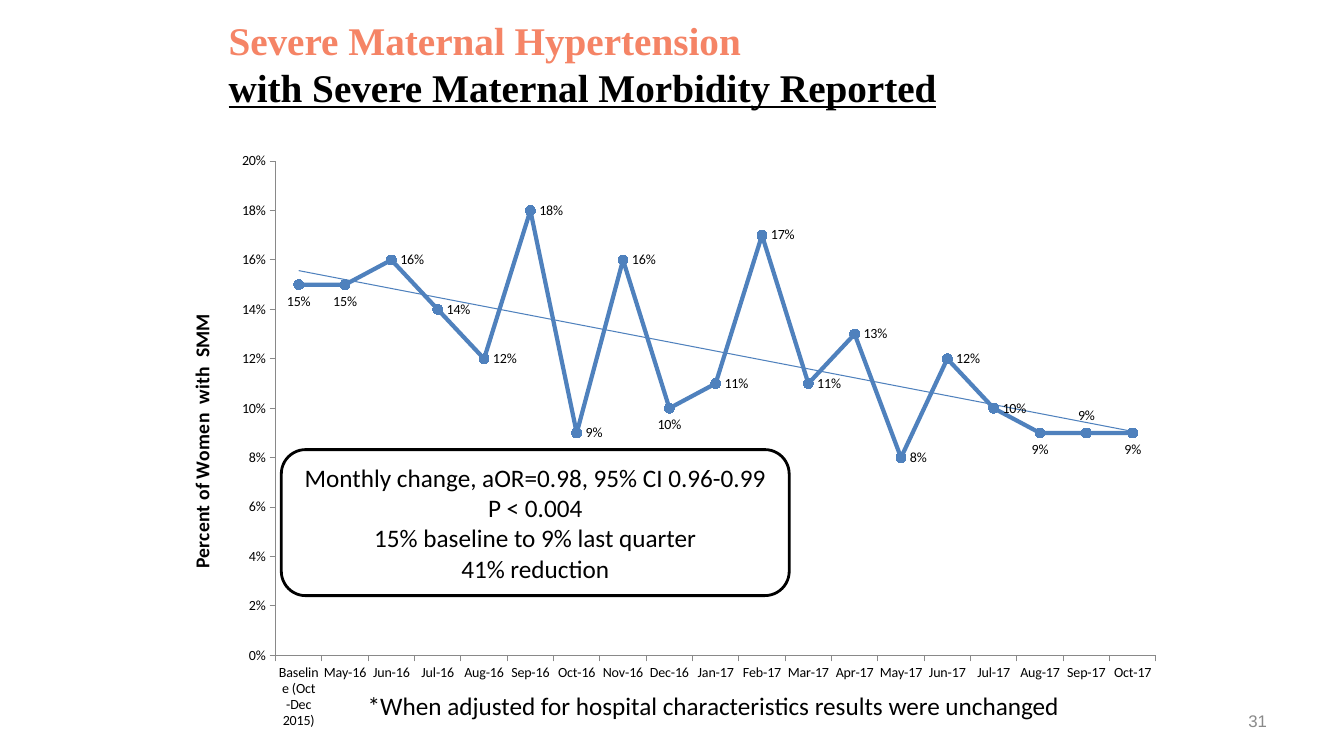
from lxml import etree
from pptx import Presentation
from pptx.chart.data import CategoryChartData
from pptx.dml.color import RGBColor
from pptx.enum.chart import XL_CHART_TYPE, XL_LABEL_POSITION, XL_MARKER_STYLE, XL_TICK_MARK
from pptx.enum.shapes import MSO_SHAPE
from pptx.enum.text import MSO_ANCHOR, MSO_AUTO_SIZE, PP_ALIGN
from pptx.oxml import parse_xml
from pptx.oxml.ns import nsdecls, qn
from pptx.util import Cm, Pt

LINE_MARKERS = XL_CHART_TYPE.LINE_MARKERS
RIGHT_OF, ABOVE, BELOW = XL_LABEL_POSITION.RIGHT, XL_LABEL_POSITION.ABOVE, XL_LABEL_POSITION.BELOW
CIRCLE, OUTSIDE = XL_MARKER_STYLE.CIRCLE, XL_TICK_MARK.OUTSIDE
ROUNDED = MSO_SHAPE.ROUNDED_RECTANGLE
TOP, MIDDLE = MSO_ANCHOR.TOP, MSO_ANCHOR.MIDDLE
GROW, FIXED = MSO_AUTO_SIZE.SHAPE_TO_FIT_TEXT, MSO_AUTO_SIZE.NONE
LEFT, CENTER, RIGHT = PP_ALIGN.LEFT, PP_ALIGN.CENTER, PP_ALIGN.RIGHT

BLACK, WHITE, CORAL, BLUE, GREY = "000000", "FFFFFF", "F58466", "4F81BD", "898989"

TITLE = "Severe Maternal Hypertension\vwith Severe Maternal Morbidity Reported"
FINDINGS = [
    "Monthly change, aOR=0.98, 95% CI 0.96-0.99",
    "P < 0.004",
    "15% baseline to 9% last quarter",
    "41% reduction",
]
FOOTNOTE = "*When adjusted for hospital characteristics results were unchanged"
PAGE_NUMBER = "31"
AXIS_TITLE = "Percent of Women  with  SMM"
MORBIDITY = [
    ("Baseline (Oct -Dec 2015)", 0.15), ("May-16", 0.15), ("Jun-16", 0.16),
    ("Jul-16", 0.14), ("Aug-16", 0.12), ("Sep-16", 0.18), ("Oct-16", 0.09),
    ("Nov-16", 0.16), ("Dec-16", 0.10), ("Jan-17", 0.11), ("Feb-17", 0.17),
    ("Mar-17", 0.11), ("Apr-17", 0.13), ("May-17", 0.08), ("Jun-17", 0.12),
    ("Jul-17", 0.10), ("Aug-17", 0.09), ("Sep-17", 0.09), ("Oct-17", 0.09),
]
MOVED_LABELS = {0: BELOW, 1: BELOW, 8: BELOW, 16: BELOW, 17: ABOVE, 18: BELOW}

TITLE_BOX = (5.51, 0, 18.42, 3.18)
CHART_BOX = (4.14, 3.61, 25.5, 15.01)
FINDINGS_BOX = (7.09, 11.33, 12.8, 3.68)
FOOTNOTE_BOX = (7.92, 17.27, 20.12, 1.02)
NUMBER_BOX = (24.28, 17.65, 7.9, 1.02)
PLOT_LAYOUT = {"x": 0.11, "y": 0.03, "w": 0.87, "h": 0.83}
AXIS_TITLE_LAYOUT = {"x": 0.02, "y": 0.28}


def color(value):
    return RGBColor.from_string(value)


def style(font, name, size, value, bold=False):
    font.name, font.size, font.bold = name, Pt(size), bold
    font.color.rgb = color(value)


def write(shape, lines, name, size, value, align, anchor=TOP, fit=FIXED):
    frame = shape.text_frame
    frame.word_wrap = True
    frame.vertical_anchor = anchor
    frame.auto_size = fit
    frame.text = "\n".join(lines)
    for paragraph in frame.paragraphs:
        paragraph.alignment = align
        for run in paragraph.runs:
            style(run.font, name, size, value)
    return frame


def add_text(slide, box, *text):
    return write(slide.shapes.add_textbox(*map(Cm, box)), *text)


def place(parent, index, layout, inner=False):
    for old in parent.findall(qn("c:layout")):
        parent.remove(old)
    element = parse_xml(f"<c:layout {nsdecls('c')}><c:manualLayout/></c:layout>")
    settings = {"layoutTarget": "inner"} if inner else {}
    settings.update({f"{key}Mode": "edge" for key in "xy"})
    settings.update(layout)
    for tag, value in settings.items():
        etree.SubElement(element[0], qn(f"c:{tag}")).set("val", str(value))
    parent.insert(index, element)


def add_trend(chart):
    trend = parse_xml(
        f'<c:trendline {nsdecls("c", "a")}><c:spPr><a:ln w="9525"><a:solidFill>'
        f'<a:srgbClr val="{BLUE}"/></a:solidFill></a:ln></c:spPr>'
        '<c:trendlineType val="linear"/><c:dispRSqr val="0"/><c:dispEq val="0"/></c:trendline>'
    )
    chart.element.xpath(".//c:ser/c:cat")[0].addprevious(trend)


def add_morbidity_chart(slide):
    data = CategoryChartData(number_format="0%")
    data.categories = [month for month, _ in MORBIDITY]
    data.add_series("Series 1", [share for _, share in MORBIDITY])
    chart = slide.shapes.add_chart(LINE_MARKERS, *map(Cm, CHART_BOX), data).chart
    chart.has_legend = chart.has_title = False
    style(chart.font, "Calibri", 10, BLACK)

    plot = chart.plots[0]
    plot.vary_by_categories = False
    series = plot.series[0]
    series.smooth = False
    series.format.line.color.rgb = color(BLUE)
    series.format.line.width = Pt(3)
    series.marker.style, series.marker.size = CIRCLE, 7
    series.marker.format.fill.solid()
    series.marker.format.fill.fore_color.rgb = color(BLUE)
    series.marker.format.line.color.rgb = color(BLUE)

    labels = series.data_labels
    labels.show_value = True
    labels.number_format, labels.number_format_is_linked = "0%", False
    labels.position = RIGHT_OF
    for index, position in MOVED_LABELS.items():
        series.points[index].data_label.position = position
    add_trend(chart)

    for axis in (chart.category_axis, chart.value_axis):
        axis.has_major_gridlines = False
        axis.major_tick_mark = OUTSIDE
        axis.format.line.color.rgb = color(GREY)
    axis = chart.value_axis
    axis.minimum_scale, axis.maximum_scale, axis.major_unit = 0, 0.2, 0.02
    axis.tick_labels.number_format = "0%"
    axis.tick_labels.number_format_is_linked = False
    axis.axis_title.text_frame.text = AXIS_TITLE
    style(axis.axis_title.text_frame.paragraphs[0].runs[0].font, "Calibri", 14, BLACK, True)
    place(axis.axis_title.element, 1, AXIS_TITLE_LAYOUT)
    place(chart.element.chart.plotArea, 0, PLOT_LAYOUT, inner=True)


def add_findings(slide):
    shape = slide.shapes.add_shape(ROUNDED, *map(Cm, FINDINGS_BOX))
    shape.shadow.inherit = False
    shape.fill.solid()
    shape.fill.fore_color.rgb = color(WHITE)
    shape.line.color.rgb = color(BLACK)
    shape.line.width = Pt(2)
    write(shape, FINDINGS, "Calibri", 18, BLACK, CENTER, MIDDLE, GROW)


def main():
    presentation = Presentation()
    presentation.slide_width, presentation.slide_height = Cm(33.87), Cm(19.05)
    slide = presentation.slides.add_slide(presentation.slide_layouts[6])

    title = add_text(slide, TITLE_BOX, [TITLE], "Times New Roman", 28, CORAL, LEFT, MIDDLE)
    topic, measure = title.paragraphs[0].runs
    topic.font.bold = measure.font.bold = measure.font.underline = True
    measure.font.color.rgb = color(BLACK)

    add_text(slide, NUMBER_BOX, [PAGE_NUMBER], "Arial", 12, GREY, RIGHT, MIDDLE)
    add_morbidity_chart(slide)
    add_findings(slide)
    add_text(slide, FOOTNOTE_BOX, [FOOTNOTE], "Calibri", 18, BLACK, CENTER, TOP, GROW)
    presentation.save("out.pptx")


if __name__ == "__main__":
    main()
